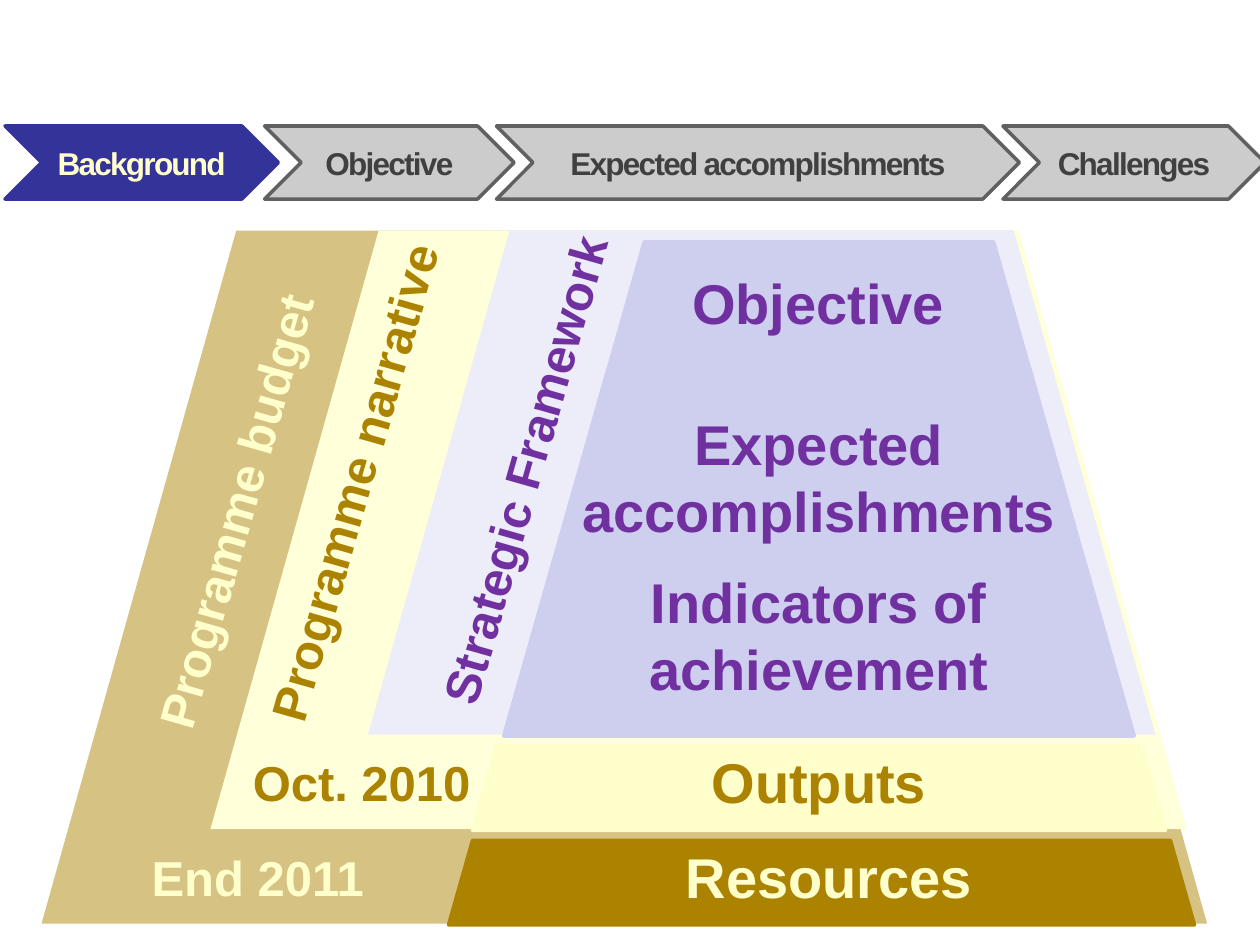
from lxml import etree
from pptx import Presentation
from pptx.dml.color import RGBColor
from pptx.enum.shapes import MSO_SHAPE as SHAPE
from pptx.enum.text import MSO_ANCHOR as ANCHOR, MSO_AUTO_SIZE as FIT, PP_ALIGN as ALIGN
from pptx.oxml.ns import qn
from pptx.util import Inches, Pt

COLORS = {
    "navy": "333399", "grey": "CCCCCC", "outline": "606060", "dark": "404040",
    "cream": "FFFFCC", "pale_cream": "FFFFD9", "gold": "AC8300",
    "lilac": "CECEEF", "pale_lilac": "EDEDF9", "purple": "7030A0",
}
FONT = "Arial"

# label, left, width, fill, line, text colour
STEPS = [
    ("Objective", 2.1, 1.98, "grey", "outline", "dark"),
    ("Expected accomplishments", 3.94, 4.15, "grey", "outline", "dark"),
    ("Challenges", 7.96, 2.08, "grey", "outline", "dark"),
    ("Background", 0.04, 2.17, "navy", "navy", "cream"),
]
STEP_TOP, STEP_HEIGHT = 1, 0.58

# left, width, height, fill, opacity in percent
LAYERS = [
    (0.33, 9.25, 5.5, "gold", 49),
    (1.67, 7.75, 4.75, "pale_cream", 100),
    (2.92, 6.25, 4, "pale_lilac", 100),
]
LAYER_TOP, LAYER_SLANT = 1.83, 0.281

# left, top, width, height, fill
OBJECTIVE_BLOCK = (4, 1.92, 5, 3.92, "lilac")
# label, left, top, width, height, size, colour, rotation
OBJECTIVE_LABEL = ("Objective", 5.08, 2.08, 2.83, 0.64, 32, "purple", 0)

# label, text colour, left inset, then the block
BLOCKS = [
    ("Expected accomplishments", "purple", 0, 4, 2.93, 5, 2.91, "lilac"),
    ("Indicators of achievement", "purple", 0, 4, 4.43, 5, 1.41, "lilac"),
    ("Outputs", "gold", 0, 3.75, 5.92, 5.5, 0.67, "cream"),
    ("Resources", "cream", 0.12, 3.56, 6.67, 5.92, 0.67, "gold"),
]
BLOCK_SLANT = 0.284

SLOPE = 285.84
LABELS = [
    ("Strategic Framework", 2.1, 3.44, 4.12, 0.57, 28, "purple", SLOPE),
    ("Programme narrative", 0.55, 3.54, 4.51, 0.57, 28, "gold", SLOPE),
    ("Programme budget", -0.36, 3.77, 4.45, 0.57, 28, "cream", SLOPE),
    ("Oct. 2010", 1.83, 5.92, 2.08, 0.57, 28, "gold", 0),
    ("End 2011", 0.92, 6.68, 2.25, 0.57, 28, "cream", 0),
]


def rgb(name):
    return RGBColor.from_string(COLORS[name])


def add_box(shapes, kind, box, fill, line=None):
    sp = shapes.add_shape(kind, *map(Inches, box))
    sp.shadow.inherit = False
    sp.fill.solid()
    sp.fill.fore_color.rgb = rgb(fill)
    if line:
        sp.line.color.rgb = rgb(line)
        sp.line.width = Pt(2)
    else:
        sp.line.fill.background()
    return sp


def set_opacity(sp, percent):
    clr = sp.fill._xPr.find(qn("a:solidFill"))[0]
    etree.SubElement(clr, qn("a:alpha")).set("val", str(percent * 1000))


def write(sp, text, size, color, anchor=ANCHOR.TOP, insets=None):
    """Put one bold centred run in the shape and return it."""
    tf = sp.text_frame
    tf.word_wrap = True
    tf.vertical_anchor = anchor
    if insets:
        (tf.margin_left, tf.margin_top,
         tf.margin_right, tf.margin_bottom) = map(Inches, insets)
    p = tf.paragraphs[0]
    p.alignment = ALIGN.CENTER
    r = p.add_run()
    r.text = text
    r.font.name, r.font.size, r.font.bold = FONT, Pt(size), True
    r.font.color.rgb = rgb(color)
    return r


def add_block(shapes, *box, fill):
    sp = add_box(shapes, SHAPE.TRAPEZOID, box, fill, fill)
    sp.adjustments[0] = BLOCK_SLANT
    return sp


def add_label(shapes, text, *box, size, color, rotation):
    sp = shapes.add_textbox(*map(Inches, box))
    sp.rotation = rotation
    write(sp, text, size, color)
    sp.text_frame.auto_size = FIT.SHAPE_TO_FIT_TEXT


def main():
    prs = Presentation()
    prs.slide_width, prs.slide_height = Inches(10), Inches(7.5)
    s = prs.slides.add_slide(prs.slide_layouts[6])

    for text, left, width, fill, line, color in STEPS:
        box = (left, STEP_TOP, width, STEP_HEIGHT)
        sp = add_box(s.shapes, SHAPE.CHEVRON, box, fill, line)
        r = write(sp, text, 18, color, ANCHOR.MIDDLE, (0.04, 0.05, 0.04, 0.05))
        r.font._element.set("spc", "-100")

    for left, width, height, fill, opacity in LAYERS:
        box = (left, LAYER_TOP, width, height)
        sp = add_box(s.shapes, SHAPE.TRAPEZOID, box, fill)
        sp.adjustments[0] = LAYER_SLANT
        if opacity < 100:
            set_opacity(sp, opacity)

    objective = s.shapes.add_group_shape().shapes
    *box, fill = OBJECTIVE_BLOCK
    add_block(objective, *box, fill=fill)
    text, *box, size, color, rotation = OBJECTIVE_LABEL
    add_label(objective, text, *box, size=size, color=color, rotation=rotation)

    for text, color, inset, *box, fill in BLOCKS:
        sp = add_block(s.shapes, *box, fill=fill)
        write(sp, text, 32, color, insets=(inset, 0, 0, 0))

    for text, *box, size, color, rotation in LABELS:
        add_label(s.shapes, text, *box, size=size, color=color, rotation=rotation)

    prs.save("out.pptx")


if __name__ == "__main__":
    main()
